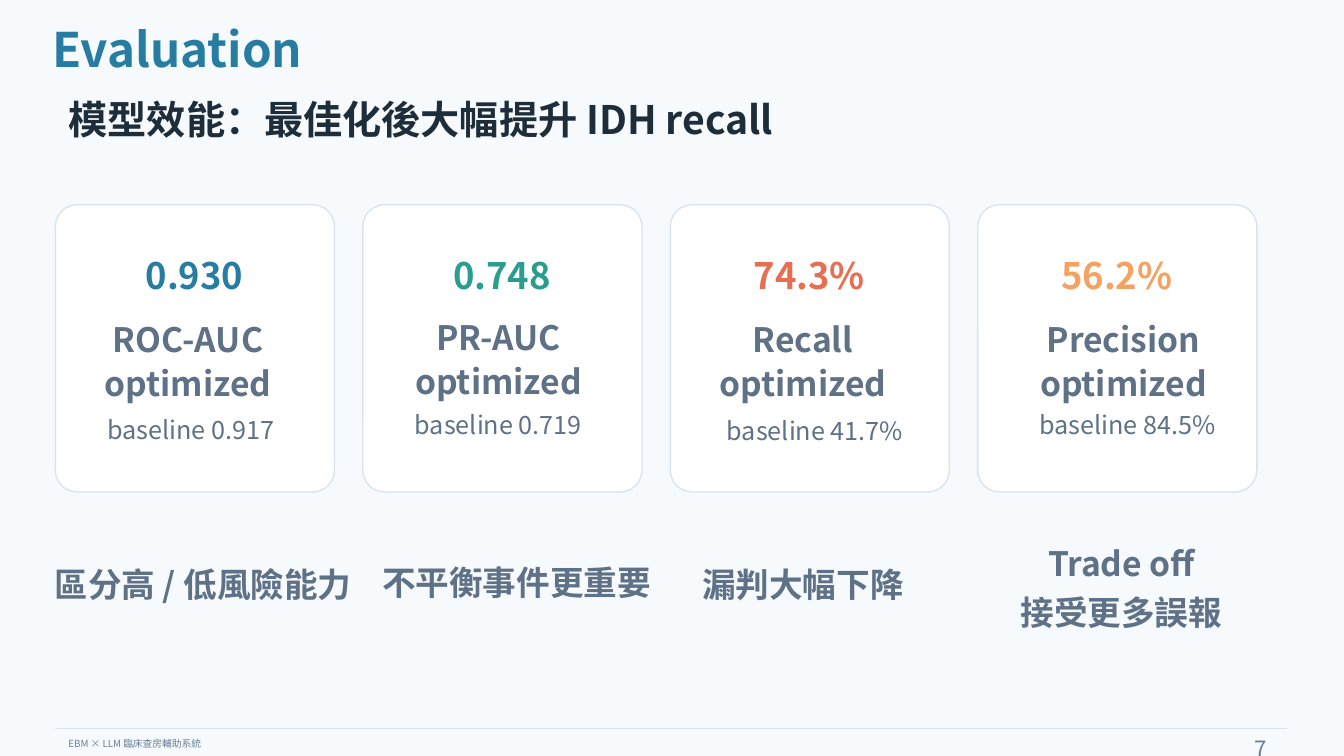
import pptx
import pptx.util
import pptx.dml.color
import pptx.enum.shapes
import pptx.enum.text
import pptx.oxml
import pptx.oxml.ns

Pt = pptx.util.Pt
RGBColor = pptx.dml.color.RGBColor
ALIGN = pptx.enum.text.PP_ALIGN

FONT = "Noto Sans CJK TC"
BACKGROUND = RGBColor(0xF7, 0xFA, 0xFD)
WHITE = RGBColor(0xFF, 0xFF, 0xFF)
BORDER = RGBColor(0xD8, 0xE4, 0xF0)
INK = RGBColor(0x1E, 0x2D, 0x3A)
SLATE = RGBColor(0x5E, 0x71, 0x86)
FOOTER = RGBColor(0x68, 0x80, 0x9A)
BLUE = RGBColor(0x27, 0x7D, 0xA1)
GREEN = RGBColor(0x2A, 0x9D, 0x8F)
RED = RGBColor(0xE7, 0x6F, 0x51)
ORANGE = RGBColor(0xF4, 0xA2, 0x61)

CARD_LEFT, CARD_TOP, CARD_WIDTH, CARD_HEIGHT = 39.6, 146.2, 199.4, 205.2
CARD_STEP = 219.6

# Each text is followed by its place relative to the card's corner
CARDS = [
    dict(color=BLUE, value="0.930",
         label=("ROC-AUC optimized", 4.3, 75.6),
         baseline=("baseline 0.917", -5.8, 138.2),
         note=("區分高 / 低風險能力", -5.8, 228.2, 222.5, 82.8)),
    dict(color=GREEN, value="0.748",
         label=("PR-AUC optimized", 6.5, 74.2),
         baseline=("baseline 0.719", -5.8, 134.6),
         note=("不平衡事件更重要", 10.1, 230.4, 199.4, 76.3)),
    dict(color=RED, value="74.3%",
         label=("Recall optimized", 4.3, 75.6),
         baseline=("baseline 41.7%", 0.7, 139),
         note=("漏判大幅下降", -5, 231.8, 199.4, 76.3)),
    dict(color=ORANGE, value="56.2%",
         label=("Precision optimized", 13.7, 75.6),
         baseline=("baseline 84.5%", 4.3, 134.6),
         note=("Trade off\n接受更多誤報", 0, 231.1, 205.2, 82.8)),
]


def add_text(page, text, left, top, width, height, *, size, color, bold=False,
             align=ALIGN.LEFT, inset=(3.6, 1.44), line_spacing=1.08, space_after=4):
    box = page.shapes.add_textbox(Pt(left), Pt(top), Pt(width), Pt(height))
    frame = box.text_frame
    frame.word_wrap = True
    frame.vertical_anchor = pptx.enum.text.MSO_ANCHOR.MIDDLE
    frame.margin_left = frame.margin_right = Pt(inset[0])
    frame.margin_top = frame.margin_bottom = Pt(inset[1])
    frame.text = text
    for para in frame.paragraphs:
        para.alignment = align
        para.line_spacing = line_spacing
        para.space_after = Pt(space_after)
        for span in para.runs:
            span.font.size = Pt(size)
            span.font.bold = bold
            span.font.color.rgb = color
            span.font.name = FONT
            # East Asian characters take their font from a:ea
            east_asian = pptx.oxml.parse_xml(
                f'<a:ea {pptx.oxml.ns.nsdecls("a")} typeface="{FONT}"/>')
            span.font._element.append(east_asian)


def add_header(page, left, top):
    add_text(page, "Evaluation", left, top, 486, 17.3,
             size=34, color=BLUE, bold=True)
    add_text(page, "模型效能：最佳化後大幅提升 IDH recall", left + 11.6, top + 38.9,
             892.8, 39.6, size=28, color=INK, bold=True)


def add_card(page, card, left, top, width, height):
    # Rounded panel
    panel = page.shapes.add_shape(pptx.enum.shapes.MSO_SHAPE.ROUNDED_RECTANGLE,
                                  Pt(left), Pt(top), Pt(width), Pt(height))
    panel.adjustments[0] = 0.078
    panel.shadow.inherit = False
    panel.fill.solid()
    panel.fill.fore_color.rgb = WHITE
    panel.line.color.rgb = BORDER
    panel.line.width = Pt(1)

    # Score, metric, baseline and the remark below the panel
    add_text(page, card["value"], left + 10.1, top + 13.7, 178.6, 70.6,
             size=26, color=card["color"], bold=True, align=ALIGN.CENTER)
    text, across, down = card["label"]
    add_text(page, text, left + across, top + down, 180.7, 69.8,
             size=24, color=SLATE, bold=True, align=ALIGN.CENTER)
    text, across, down = card["baseline"]
    add_text(page, text, left + across, top + down, 205.2, 43.2,
             size=18, color=SLATE, align=ALIGN.CENTER)
    text, across, down, note_width, note_height = card["note"]
    add_text(page, text, left + across, top + down, note_width, note_height,
             size=24, color=SLATE, bold=True, align=ALIGN.CENTER)


def add_footer(page, left, top, width):
    rule = page.shapes.add_connector(pptx.enum.shapes.MSO_CONNECTOR.STRAIGHT,
                                     Pt(left), Pt(top), Pt(left + width), Pt(top))
    rule.line.color.rgb = BORDER
    rule.line.width = Pt(0.7)
    rule._element.spPr.append(pptx.oxml.parse_xml(
        f'<a:effectLst {pptx.oxml.ns.nsdecls("a")}/>'))
    add_text(page, "EBM × LLM 臨床查房輔助系統", left + 2.2, top + 2.9, 360, 15.8,
             size=7, color=FOOTER, inset=(7.2, 3.6), line_spacing=1, space_after=0)
    add_text(page, "7", left + 849.6, top + 1.4, 62.6, 23.8,
             size=16, color=FOOTER, inset=(7.2, 3.6))


def build_evaluation(deck):
    page = deck.slides.add_slide(deck.slide_layouts[6])
    page.background.fill.solid()
    page.background.fill.fore_color.rgb = BACKGROUND
    add_footer(page, CARD_LEFT, 520.6, 879.8)
    add_header(page, 33.8, 24.5)
    for index, card in enumerate(CARDS):
        add_card(page, card, CARD_LEFT + index * CARD_STEP, CARD_TOP,
                 CARD_WIDTH, CARD_HEIGHT)


def main():
    deck = pptx.Presentation()
    deck.slide_width, deck.slide_height = Pt(960), Pt(540)
    build_evaluation(deck)
    deck.save("out.pptx")


if __name__ == "__main__":
    main()
